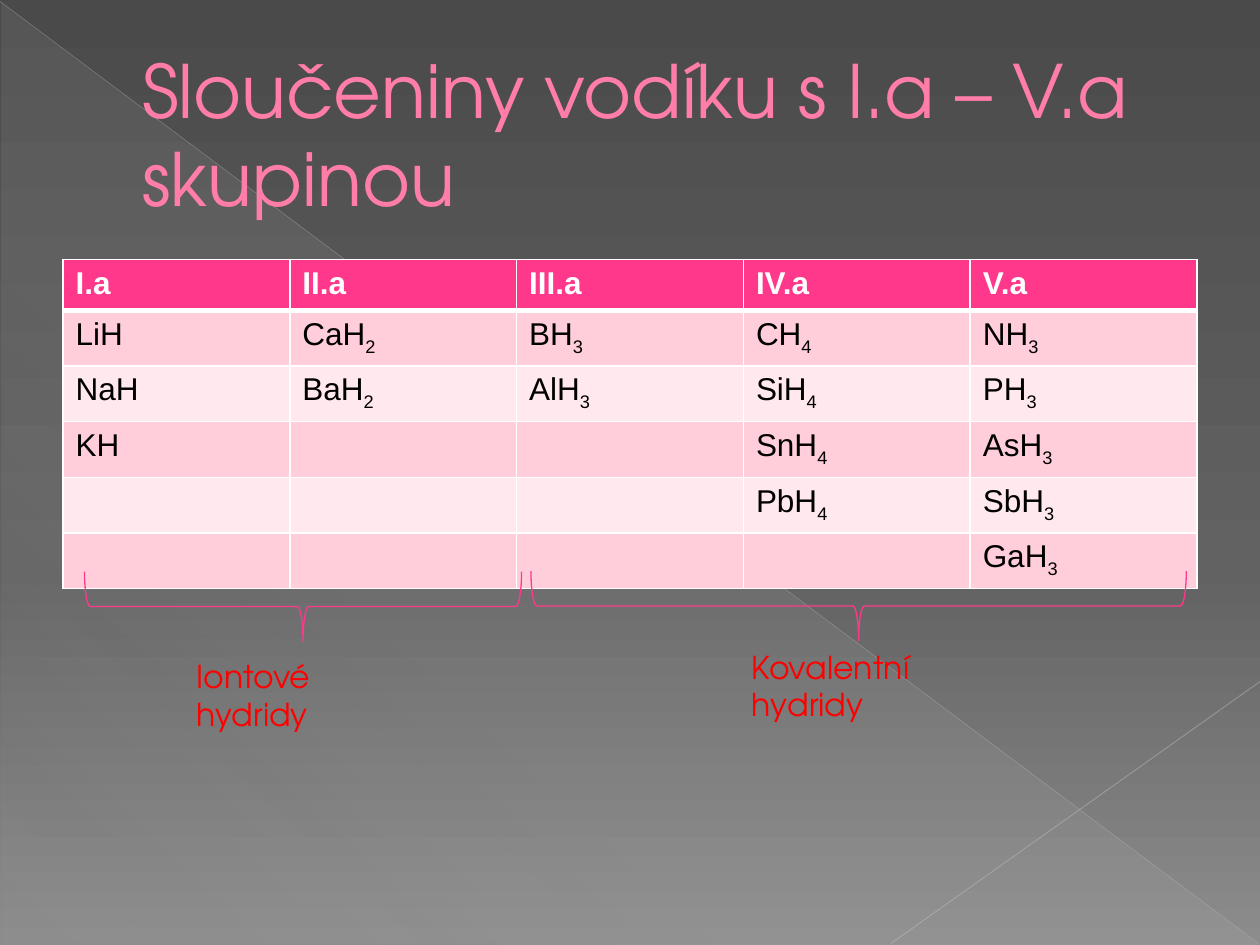
import dataclasses
import typing

import lxml.etree
import pptx
import pptx.dml.color
import pptx.enum.shapes
import pptx.enum.text
import pptx.oxml.ns
import pptx.util

Cm = pptx.util.Cm
Pt = pptx.util.Pt
qn = pptx.oxml.ns.qn
Kind = pptx.enum.shapes.MSO_SHAPE

HUES = {
    "top": "4A4A4A", "mid": "626262", "base": "8C8C8C", "veil": "D2D2D2",
    "long": "BFBFBF", "short": "C6C6C6", "title": "FF7DA7", "edge": "B12761",
    "head": "FF388C", "odd": "FFCEDA", "even": "FFE8EE",
    "white": "FFFFFF", "black": "000000", "red": "FF0000",
}
SANS, ROUND = "Arial", "TeX Gyre Adventor"


@dataclasses.dataclass
class Box:
    left: float
    top: float
    width: float
    height: float

    def spans(self) -> list:
        return [Cm(n) for n in (self.left, self.top, self.width, self.height)]


@dataclasses.dataclass
class Ray:
    start: tuple
    end: tuple
    hue: str
    width: float
    alpha: int


@dataclasses.dataclass
class Group:
    brace: Box
    label: Box
    text: str


RAYS = [
    Ray((0, 0.03), (25.37, 19.02), "long", 0.39, 35),
    Ray((25.4, 13.74), (17.96, 19.02), "short", 0.47, 45),
]
GROUPS = [
    Group(Box(5.41, 7.82, 1.4, 8.81), Box(3.71, 13.13, 4.57, 1.02), "Iontové hydridy"),
    Group(Box(16.61, 5.61, 1.4, 13.21), Box(14.91, 12.93, 5.36, 1.02), "Kovalentní hydridy"),
]
HEADS = ["I.a", "II.a", "III.a", "IV.a", "V.a"]
ROWS = [
    ["LiH", "CaH2", "BH3", "CH4", "NH3"],
    ["NaH", "BaH2", "AlH3", "SiH4", "PH3"],
    ["KH", "", "", "SnH4", "AsH3"],
    ["", "", "", "PbH4", "SbH3"],
    ["", "", "", "", "GaH3"],
]


def shade(name: str) -> pptx.dml.color.RGBColor:
    return pptx.dml.color.RGBColor.from_string(HUES[name])


def add_node(parent, tag: str, **attrs):
    return lxml.etree.SubElement(parent, qn(tag), {k: str(v) for k, v in attrs.items()})


def add_hue(parent, name: str, alpha: int = 100) -> None:
    node = add_node(parent, "a:srgbClr", val=HUES[name])
    if alpha < 100:
        add_node(node, "a:alpha", val=alpha * 1000)


def set_blend(fill, owner, stops: list, angle: int) -> None:
    fill.gradient()
    grad = owner.find(".//" + qn("a:gradFill"))
    for child in list(grad):
        grad.remove(child)
    group = add_node(grad, "a:gsLst")
    for place, name, alpha in stops:
        add_hue(add_node(group, "a:gs", pos=place * 1000), name, alpha)
    add_node(grad, "a:lin", ang=angle * 60000, scaled=0)


def add_run(para, text: str, **style):
    run = para.add_run()
    run.text = text
    hue = style.pop("hue")
    for key, value in style.items():
        setattr(run.font, key, value)
    run.font.color.rgb = shade(hue)
    return run


def add_text(slide, box: Box, text: str, size: int, hue: str):
    frame = slide.shapes.add_textbox(*box.spans()).text_frame
    frame.word_wrap = True
    run = add_run(frame.paragraphs[0], text, size=Pt(size), name=ROUND, hue=hue)
    return frame, run


def add_ray(slide, ray: Ray) -> None:
    ends = [Cm(n) for n in ray.start + ray.end]
    line = slide.shapes.add_connector(pptx.enum.shapes.MSO_CONNECTOR.STRAIGHT, *ends)
    line.line.width = Pt(ray.width)
    line.line.color.rgb = shade(ray.hue)
    props = line._element.spPr
    add_node(props.find(".//" + qn("a:srgbClr")), "a:alpha", val=ray.alpha * 1000)
    add_node(props, "a:effectLst")


def add_group(slide, group: Group) -> None:
    brace = slide.shapes.add_shape(Kind.LEFT_BRACE, *group.brace.spans())
    brace.rotation = 270
    brace.shadow.inherit = False
    brace.fill.background()
    brace.line.color.rgb = shade("head")
    brace.line.width = Pt(0.75)
    add_text(slide, group.label, group.text, 18, "red")


def fill_cell(cell, text: str, row: int) -> None:
    # Borders come before the fill; a thick rule parts head and body
    thick = {"a:lnB": 0, "a:lnT": 1}
    props = cell._tc.get_or_add_tcPr()
    for tag in ("a:lnL", "a:lnR", "a:lnT", "a:lnB"):
        width = 3 if thick.get(tag) == row else 1
        edge = add_node(props, tag, w=Pt(width))
        add_hue(add_node(edge, "a:solidFill"), "white")
    cell.fill.solid()
    cell.fill.fore_color.rgb = shade("head" if row == 0 else "odd" if row % 2 else "even")

    # Trailing digits become subscripts
    para = cell.text_frame.paragraphs[0]
    para.font.size = Pt(18)
    style: dict[str, typing.Any] = {
        "size": Pt(18), "name": SANS, "bold": row == 0,
        "hue": "black" if row else "white",
    }
    stem = text.rstrip("0123456789")
    if stem:
        add_run(para, stem, **style)
    if stem != text:
        run = add_run(para, text[len(stem):], **style)
        run.font._element.set("baseline", "-25000")


def add_grid(slide, box: Box) -> None:
    data = [HEADS] + ROWS
    table = slide.shapes.add_table(len(data), len(HEADS), *box.spans()).table
    for row, words in enumerate(data):
        for col, text in enumerate(words):
            fill_cell(table.cell(row, col), text, row)


def main() -> None:
    deck = pptx.Presentation()
    deck.slide_width, deck.slide_height = Cm(25.4), Cm(19.05)
    slide = deck.slides.add_slide(deck.slide_layouts[6])

    # Backdrop
    stops = [(0, "top", 100), (60, "mid", 100), (100, "base", 100)]
    set_blend(slide.background.fill, slide._element, stops, 90)
    veil = slide.shapes.add_shape(Kind.RIGHT_TRIANGLE, *Box(0.03, 0.05, 25.37, 19).spans())
    veil.shadow.inherit = False
    veil.line.fill.background()
    stops = [(0, "veil", 10), (70, "veil", 8), (100, "veil", 1)]
    set_blend(veil.fill, veil._element, stops, 133)
    for ray in RAYS:
        add_ray(slide, ray)

    # Title with a thin outline
    frame, run = add_text(slide, Box(1.27, 0.74, 22.86, 3.89),
                          "Sloučeniny vodíku s I.a – V.a skupinou", 42, "title")
    frame.vertical_anchor = pptx.enum.text.MSO_ANCHOR.MIDDLE
    frame.paragraphs[0]._p.get_or_add_pPr().set("marL", str(Cm(1.35)))
    edge = add_node(run.font._element, "a:ln", w=Pt(0.5))
    add_hue(add_node(edge, "a:solidFill"), "edge")
    run.font._element.insert(0, edge)

    # Table, braces and labels
    add_grid(slide, Box(1.27, 5.23, 22.86, 6.17))
    for group in GROUPS:
        add_group(slide, group)

    deck.save("out.pptx")


if __name__ == "__main__":
    main()
